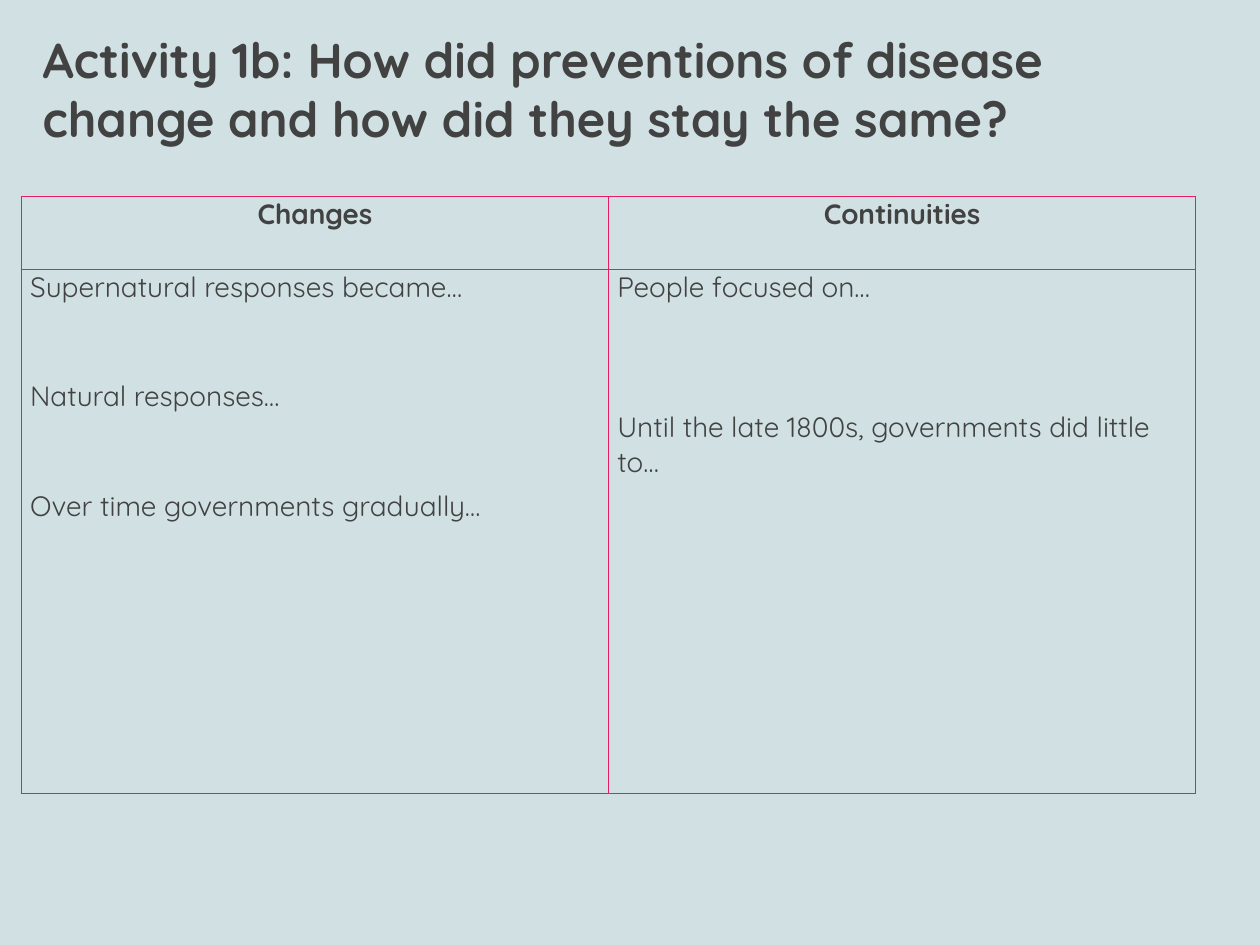
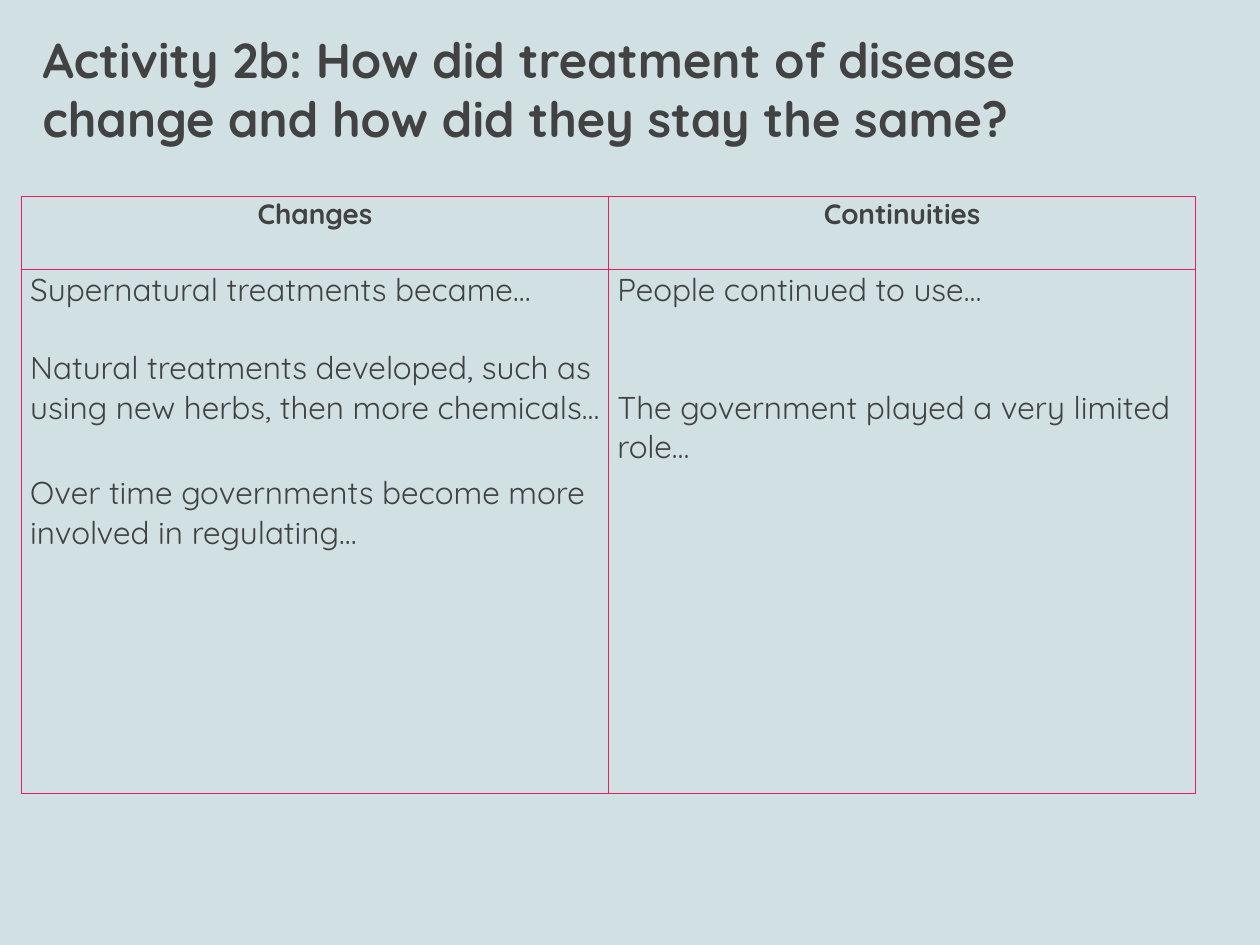
"""Build two slides comparing changes and continuities in medicine."""
from lxml import etree
from pptx import Presentation
from pptx.dml.color import RGBColor
from pptx.enum.text import MSO_ANCHOR as Anchor, PP_ALIGN as Align
from pptx.oxml.ns import qn
from pptx.util import Inches, Pt

PALE = RGBColor(0xD0, 0xE0, 0xE3)
INK = RGBColor(0x42, 0x42, 0x42)
PINK = RGBColor(0xE9, 0x1D, 0x63)
FONT = "Quicksand"
HEADS = ["Changes", "Continuities"]
COL = 4.66
ROWS = [0.58, 4.16]

# Each column lists (gap before in points, text).
PAGES = [
    {
        "title": "Activity 1b: How did preventions of disease change and how did they stay the same?",
        "size": 16,
        "cols": [
            [(0, "Supernatural responses became…"),
             (42.5, "Natural responses…"),
             (42.5, "Over time governments gradually…")],
            [(0, "People focused on…"),
             (60, "Until the late 1800s, governments did little to…")],
        ],
    },
    {
        "title": "Activity 2b: How did treatment of disease change and how did they stay the same?",
        "size": 18,
        "cols": [
            [(0, "Supernatural treatments became…"),
             (22.5, "Natural treatments developed, such as using new herbs, then more chemicals…"),
             (26.25, "Over time governments become more involved in regulating…")],
            [(0, "People continued to use…"),
             (45, "The government played a very limited role…")],
        ],
    },
]


def style(para, size, bold=False):
    font = para.font
    font.name, font.size, font.bold = FONT, Pt(size), bold
    font.color.rgb = INK


def add_title(slide, text):
    box = slide.shapes.add_textbox(Inches(0.24), Inches(0.17), Inches(9.25), Inches(1.1))
    frame = box.text_frame
    frame.word_wrap = True
    frame.vertical_anchor = Anchor.BOTTOM
    frame.margin_left = frame.margin_right = Inches(0.1)
    frame.margin_top = frame.margin_bottom = Inches(0.1)
    para = frame.paragraphs[0]
    para.text = text
    style(para, 28, True)


def add_edges(cell):
    props = cell._tc.get_or_add_tcPr()
    for spot, side in enumerate(("a:lnL", "a:lnR", "a:lnT", "a:lnB")):
        line = etree.Element(qn(side), w=str(Pt(1)))
        fill = etree.SubElement(line, qn("a:solidFill"))
        etree.SubElement(fill, qn("a:srgbClr"), val=str(PINK))
        props.insert(spot, line)


def fill_cell(cell, items, size, head=False):
    cell.margin_left = cell.margin_right = Inches(0.07)
    cell.margin_top = cell.margin_bottom = 0
    cell.fill.background()
    add_edges(cell)
    frame = cell.text_frame
    for num, (gap, text) in enumerate(items):
        para = frame.add_paragraph() if num else frame.paragraphs[0]
        para.text = text
        if gap:
            para.space_before = Pt(gap)
        if head:
            para.alignment = Align.CENTER
        style(para, size, head)


def add_grid(slide, page):
    grid = slide.shapes.add_table(
        2, 2, Inches(0.17), Inches(1.56), Inches(2 * COL), Inches(sum(ROWS))).table
    grid.first_row = grid.horz_banding = False
    for row, high in zip(grid.rows, ROWS):
        row.height = Inches(high)
    for num, (head, items) in enumerate(zip(HEADS, page["cols"])):
        grid.columns[num].width = Inches(COL)
        fill_cell(grid.cell(0, num), [(0, head)], 16, True)
        fill_cell(grid.cell(1, num), items, page["size"])


def main():
    deck = Presentation()
    deck.slide_width, deck.slide_height = Inches(10), Inches(7.5)
    for page in PAGES:
        slide = deck.slides.add_slide(deck.slide_layouts[6])
        back = slide.background.fill
        back.solid()
        back.fore_color.rgb = PALE
        add_title(slide, page["title"])
        add_grid(slide, page)
    deck.save("out.pptx")


if __name__ == "__main__":
    main()
